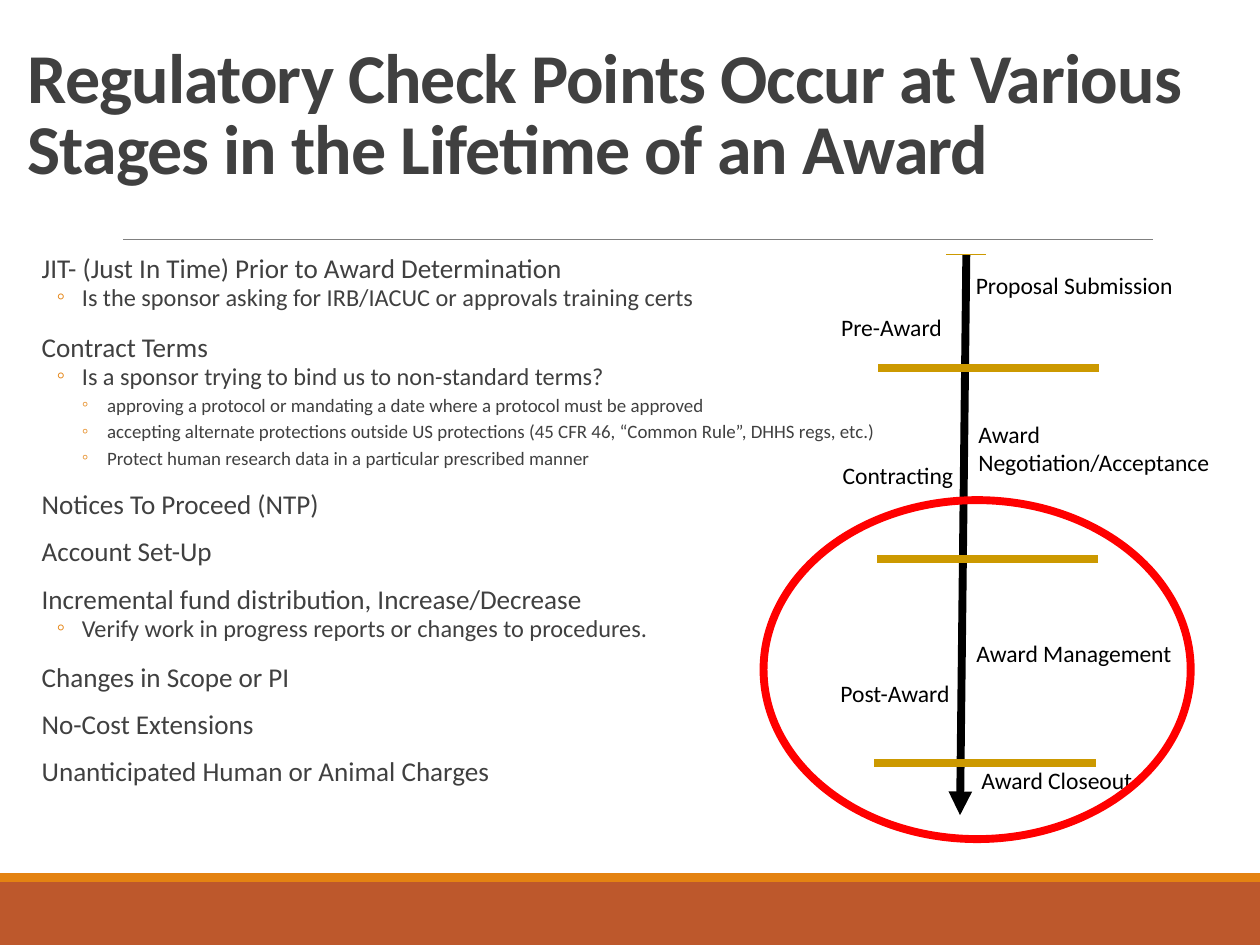
"""Build the slide on regulatory check points in the lifetime of an award."""
from typing import NamedTuple

from lxml.etree import SubElement
from pptx import Presentation
from pptx.dml.color import RGBColor
from pptx.enum.shapes import MSO_CONNECTOR, MSO_SHAPE
from pptx.enum.text import MSO_ANCHOR, MSO_AUTO_SIZE, PP_ALIGN
from pptx.oxml.ns import qn
from pptx.shapes.autoshape import Shape
from pptx.shapes.connector import Connector
from pptx.slide import Slide
from pptx.text.text import TextFrame, _Paragraph as Paragraph
from pptx.util import Pt

FONT = "Calibri"
BLACK = RGBColor(0x00, 0x00, 0x00)
DARK = RGBColor(0x40, 0x40, 0x40)
GRAY = RGBColor(0x80, 0x80, 0x80)
RUST = RGBColor(0xBD, 0x58, 0x2C)
ORANGE = RGBColor(0xE4, 0x83, 0x12)
GOLD = RGBColor(0xCC, 0x99, 0x00)
RED = RGBColor(0xFF, 0x00, 0x00)


class Level(NamedTuple):
    size: float
    margin: float
    indent: float
    before: float
    after: float
    bullet: str


class Item(NamedTuple):
    level: int
    text: str


class Line(NamedTuple):
    x1: float
    y1: float
    x2: float
    y2: float
    color: RGBColor
    width: float


class Label(NamedTuple):
    text: str
    left: float
    top: float
    width: float
    height: float = 23.8


class Band(NamedTuple):
    top: float
    height: float
    color: RGBColor


LEVELS = (
    Level(15.5, 7.2, 0, 12, 2, ""),
    Level(13.9, 30.2, -14.4, 2, 4, "◦"),
    Level(10.8, 44.6, -14.4, 2, 4, "◦"),
)
ITEMS = (
    Item(0, "JIT- (Just In Time) Prior to Award Determination"),
    Item(1, "Is the sponsor asking for IRB/IACUC or approvals training certs"),
    Item(0, "Contract Terms"),
    Item(1, "Is a sponsor trying to bind us to non-standard terms?"),
    Item(2, "approving a protocol or mandating a date where a protocol must be approved"),
    Item(2, "accepting alternate protections outside US protections "
            "(45 CFR 46, “Common Rule”, DHHS regs, etc.)"),
    Item(2, "Protect human research data in a particular prescribed manner"),
    Item(0, "Notices To Proceed (NTP)"),
    Item(0, "Account Set-Up"),
    Item(0, "Incremental fund distribution, Increase/Decrease"),
    Item(1, "Verify work in progress reports or changes to procedures."),
    Item(0, "Changes in Scope or PI"),
    Item(0, "No-Cost Extensions"),
    Item(0, "Unanticipated Human or Animal Charges"),
)
BANDS = (Band(504, 36, RUST), Band(499, 5, ORANGE))
DIVIDER = Line(70.5, 136.8, 659, 136.8, GRAY, 0.5)
TIMELINE = Line(552.2, 145.4, 548.6, 465.8, BLACK, 4.5)
STAGE_MARKS = (
    Line(501.8, 210.2, 628, 210.2, GOLD, 4.5),
    Line(501.2, 319.2, 627.6, 319.2, GOLD, 4.5),
    Line(499.6, 436.2, 626.2, 436.2, GOLD, 4.5),
    Line(540.6, 145.4, 563.6, 145.4, GOLD, 1),
)
LABELS = (
    Label("Proposal Submission", 550.6, 151.4, 155.5),
    Label("Award Negotiation/Acceptance", 552, 236.2, 155.5, 40.3),
    Label("Award Management", 550.8, 361.4, 149.8),
    Label("Award Closeout", 553.7, 434.4, 122.4),
    Label("Pre-Award", 473.6, 175.2, 85),
    Label("Contracting", 474.4, 260, 85),
    Label("Post-Award", 473.2, 384.6, 85),
)


def place(shape: Shape, left: float, top: float, width: float, height: float) -> None:
    shape.left, shape.top = Pt(left), Pt(top)
    shape.width, shape.height = Pt(width), Pt(height)


def style(paragraph: Paragraph, size: float, color: RGBColor, bold: bool = False) -> None:
    paragraph.font.name = FONT
    paragraph.font.size = Pt(size)
    paragraph.font.bold = bold
    paragraph.font.color.rgb = color


def add_line(slide: Slide, line: Line) -> Connector:
    connector = slide.shapes.add_connector(
        MSO_CONNECTOR.STRAIGHT, Pt(line.x1), Pt(line.y1), Pt(line.x2), Pt(line.y2))
    connector.line.color.rgb = line.color
    connector.line.width = Pt(line.width)
    SubElement(connector._element.spPr, qn("a:effectLst"))
    return connector


def add_band(slide: Slide, band: Band) -> None:
    shape = slide.shapes.add_shape(
        MSO_SHAPE.RECTANGLE, 0, Pt(band.top), Pt(720), Pt(band.height))
    shape.shadow.inherit = False
    shape.fill.solid()
    shape.fill.fore_color.rgb = band.color
    shape.line.fill.background()


def add_label(slide: Slide, label: Label) -> None:
    box = slide.shapes.add_textbox(
        Pt(label.left), Pt(label.top), Pt(label.width), Pt(label.height))
    box.text_frame.word_wrap = True
    box.text_frame.text = label.text
    style(box.text_frame.paragraphs[0], 13.5, BLACK)


def fill_title(title: Shape) -> None:
    place(title, 8.6, 5.8, 704.9, 105.8)
    frame = title.text_frame
    frame.auto_size = MSO_AUTO_SIZE.NONE
    frame.vertical_anchor = MSO_ANCHOR.BOTTOM
    frame.text = "Regulatory Check Points Occur at Various Stages in the Lifetime of an Award"
    paragraph = frame.paragraphs[0]
    paragraph.alignment = PP_ALIGN.LEFT
    paragraph.line_spacing = 0.85
    style(paragraph, 40, DARK, bold=True)
    paragraph._p.pPr.find(qn("a:defRPr")).set("spc", "-50")


def add_item(frame: TextFrame, paragraph: Paragraph, item: Item) -> None:
    level = LEVELS[item.level]
    paragraph.text = item.text
    paragraph.level = item.level
    paragraph.line_spacing = 0.7
    paragraph.space_before, paragraph.space_after = Pt(level.before), Pt(level.after)
    properties = paragraph._p.get_or_add_pPr()
    properties.set("marL", str(Pt(level.margin)))
    properties.set("indent", str(Pt(level.indent)))
    if level.bullet:
        color = SubElement(properties, qn("a:buClr"))
        SubElement(color, qn("a:srgbClr")).set("val", str(ORANGE))
        SubElement(properties, qn("a:buChar")).set("char", level.bullet)
    else:
        SubElement(properties, qn("a:buNone"))
    style(paragraph, level.size, DARK)


def fill_body(body: Shape) -> None:
    place(body, 16.6, 145.4, 494.6, 321.1)
    frame = body.text_frame
    frame.auto_size = MSO_AUTO_SIZE.NONE
    frame.margin_left = frame.margin_right = 0
    for index, item in enumerate(ITEMS):
        add_item(frame, frame.add_paragraph() if index else frame.paragraphs[0], item)


def main() -> None:
    presentation = Presentation()
    presentation.slide_width, presentation.slide_height = Pt(720), Pt(540)
    slide = presentation.slides.add_slide(presentation.slide_layouts[1])
    for band in BANDS:
        add_band(slide, band)
    add_line(slide, DIVIDER)
    fill_title(slide.shapes.title)
    fill_body(slide.placeholders[1])
    arrow = add_line(slide, TIMELINE)
    SubElement(arrow.line._get_or_add_ln(), qn("a:tailEnd")).set("type", "triangle")
    for mark in STAGE_MARKS:
        add_line(slide, mark)
    for label in LABELS:
        add_label(slide, label)
    highlight = slide.shapes.add_shape(
        MSO_SHAPE.OVAL, Pt(436.3), Pt(285.8), Pt(244.1), Pt(193.7))
    highlight.shadow.inherit = False
    highlight.fill.background()
    highlight.line.color.rgb = RED
    highlight.line.width = Pt(4.5)
    presentation.save("out.pptx")


if __name__ == "__main__":
    main()
